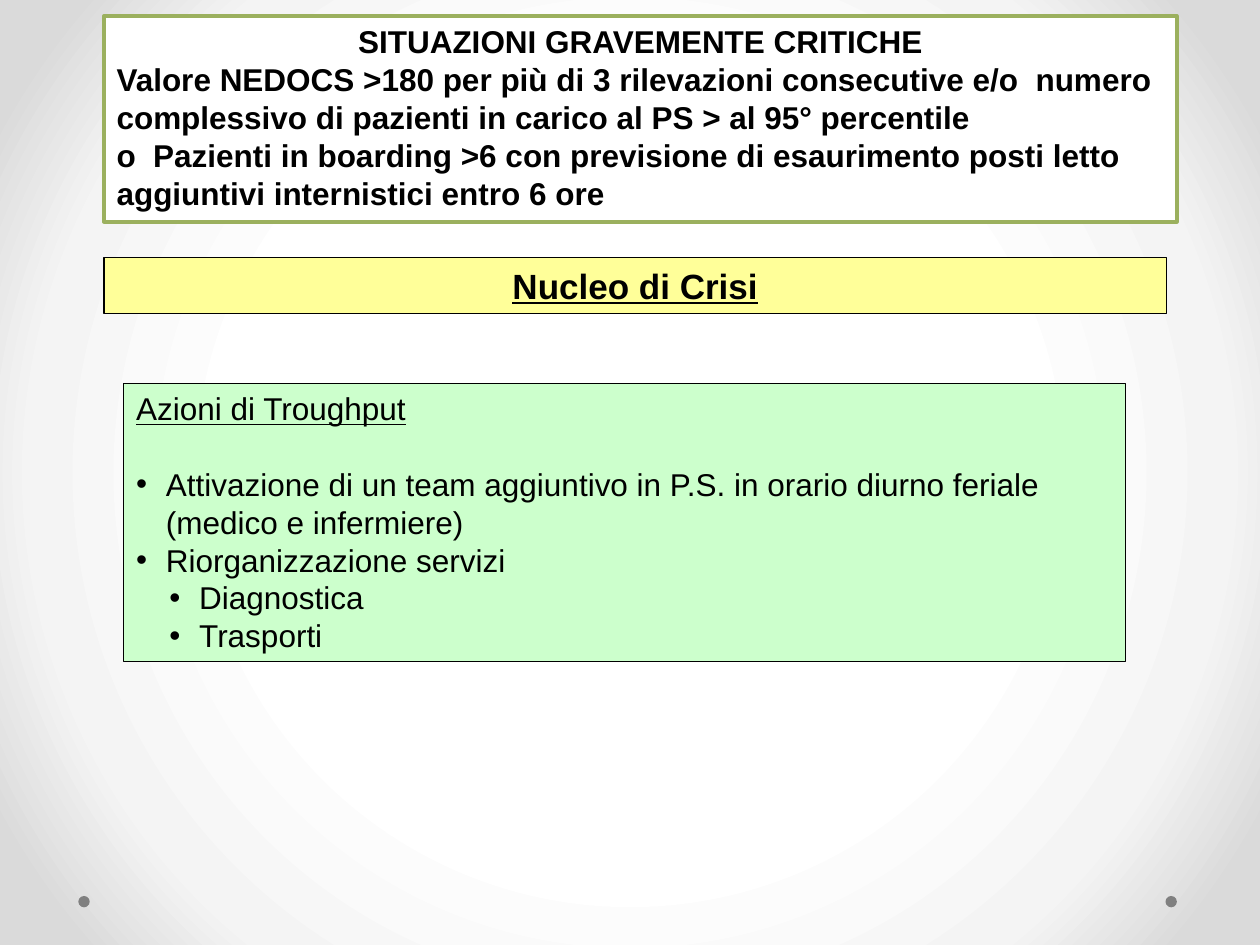
from lxml import etree
from pptx import Presentation
from pptx import util as u
from pptx.dml.color import RGBColor
from pptx.enum import shapes, text
from pptx.oxml import ns, parse_xml

BLACK = RGBColor(0x00, 0x00, 0x00)
WHITE = RGBColor(0xFF, 0xFF, 0xFF)
OLIVE = RGBColor(0x9B, 0xB0, 0x5E)
YELLOW = RGBColor(0xFF, 0xFF, 0x99)
GREEN = RGBColor(0xCC, 0xFF, 0xCC)
GRAY = RGBColor(0x80, 0x80, 0x80)
BACKDROP = ((50, WHITE), (76, RGBColor(0xF4, 0xF4, 0xF4)), (92, RGBColor(0xDA, 0xDA, 0xDA)))

HANGING = 17
CRITERIA = (
    "Valore NEDOCS >180 per più di 3 rilevazioni consecutive e/o  numero "
    "complessivo di pazienti in carico al PS > al 95° percentile",
    "o  Pazienti in boarding >6 con previsione di esaurimento posti letto "
    "aggiuntivi internistici entro 6 ore",
)
ACTIONS = (
    (0, "Attivazione di un team aggiuntivo in P.S. in orario diurno feriale "
        "(medico e infermiere)"),
    (0, "Riorganizzazione servizi"),
    (1, "Diagnostica"),
    (1, "Trasporti"),
)


def paint_background(page):
    """Circular gradient, light in the centre."""
    fill = page.background.fill
    fill.solid()
    properties = page.background._cSld.bg.bgPr
    stops = "".join(
        f'<a:gs pos="{place * 1000}"><a:srgbClr val="{color}"/></a:gs>'
        for place, color in BACKDROP)
    gradient = parse_xml(
        f'<a:gradFill {ns.nsdecls("a")} rotWithShape="1"><a:gsLst>{stops}</a:gsLst>'
        '<a:path path="circle"><a:fillToRect l="50000" t="50000" r="50000" b="50000"/>'
        '</a:path></a:gradFill>')
    properties.replace(properties.find(ns.qn("a:solidFill")), gradient)


def style_box(box, fill, line, width):
    box.fill.solid()
    box.fill.fore_color.rgb = fill
    box.line.color.rgb = line
    box.line.width = u.Pt(width)
    frame = box.text_frame
    frame.word_wrap = True
    frame.auto_size = text.MSO_AUTO_SIZE.NONE
    frame.vertical_anchor = text.MSO_ANCHOR.TOP


def add_box(page, left, top, width, height, fill, line, line_width=0.75):
    box = page.shapes.add_shape(shapes.MSO_SHAPE.RECTANGLE, u.Pt(left), u.Pt(top),
                                u.Pt(width), u.Pt(height))
    box.shadow.inherit = False
    style_box(box, fill, line, line_width)
    return box


def write_line(frame, wording, size=18, bold=False, underline=False, centered=False):
    """Fill the first paragraph, or append one when it is already used."""
    para = frame.paragraphs[0]
    if para.text:
        para = frame.add_paragraph()
    para.text = wording
    para.alignment = text.PP_ALIGN.CENTER if centered else text.PP_ALIGN.LEFT
    para.line_spacing = u.Pt(size * 1.2)
    para.space_before = u.Pt(0)
    font = para.font
    font.name, font.size = "Arial", u.Pt(size)
    font.bold, font.underline = bold, underline
    font.color.rgb = BLACK
    return para


def add_bullet(para, level):
    para.level = level
    properties = para._p.get_or_add_pPr()
    properties.set("marL", str(u.Pt(36 if level else HANGING)))
    properties.set("indent", str(-u.Pt(HANGING)))
    bullet_font = etree.Element(ns.qn("a:buFont"), typeface="Arial")
    bullet = etree.Element(ns.qn("a:buChar"), char="•")
    defaults = properties.find(ns.qn("a:defRPr"))
    defaults.addprevious(bullet_font)
    defaults.addprevious(bullet)


def add_dot(page, left):
    dot = page.shapes.add_shape(shapes.MSO_SHAPE.OVAL, u.Pt(left), u.Pt(512),
                                u.Pt(6.5), u.Pt(6.5))
    dot.shadow.inherit = False
    dot.fill.solid()
    dot.fill.fore_color.rgb = GRAY
    dot.line.fill.background()


def main():
    deck = Presentation()
    deck.slide_width, deck.slide_height = u.Pt(720), u.Pt(540)
    page = deck.slides.add_slide(deck.slide_layouts[5])
    paint_background(page)

    # Corner dots
    for left in (44.75, 666):
        add_dot(page, left)

    # Criteria for a critical situation
    criteria = add_box(page, 59.5, 9.25, 613, 117.5, WHITE, OLIVE, 2.25).text_frame
    write_line(criteria, "SITUAZIONI GRAVEMENTE CRITICHE", bold=True, centered=True)
    for wording in CRITERIA:
        write_line(criteria, wording, bold=True)

    # Title band
    title = page.shapes.title
    title.left, title.top = u.Pt(59.5), u.Pt(147.25)
    title.width, title.height = u.Pt(607), u.Pt(31.75)
    style_box(title, YELLOW, BLACK, 0.75)
    write_line(title.text_frame, "Nucleo di Crisi", size=20, bold=True,
               underline=True, centered=True)

    # Actions
    actions = add_box(page, 70.75, 219, 572.5, 159.25, GREEN, BLACK).text_frame
    heading = write_line(actions, "Azioni di Troughput", underline=True)
    heading.space_after = u.Pt(21.6)
    for level, wording in ACTIONS:
        add_bullet(write_line(actions, wording), level)

    deck.save("out.pptx")


if __name__ == "__main__":
    main()
